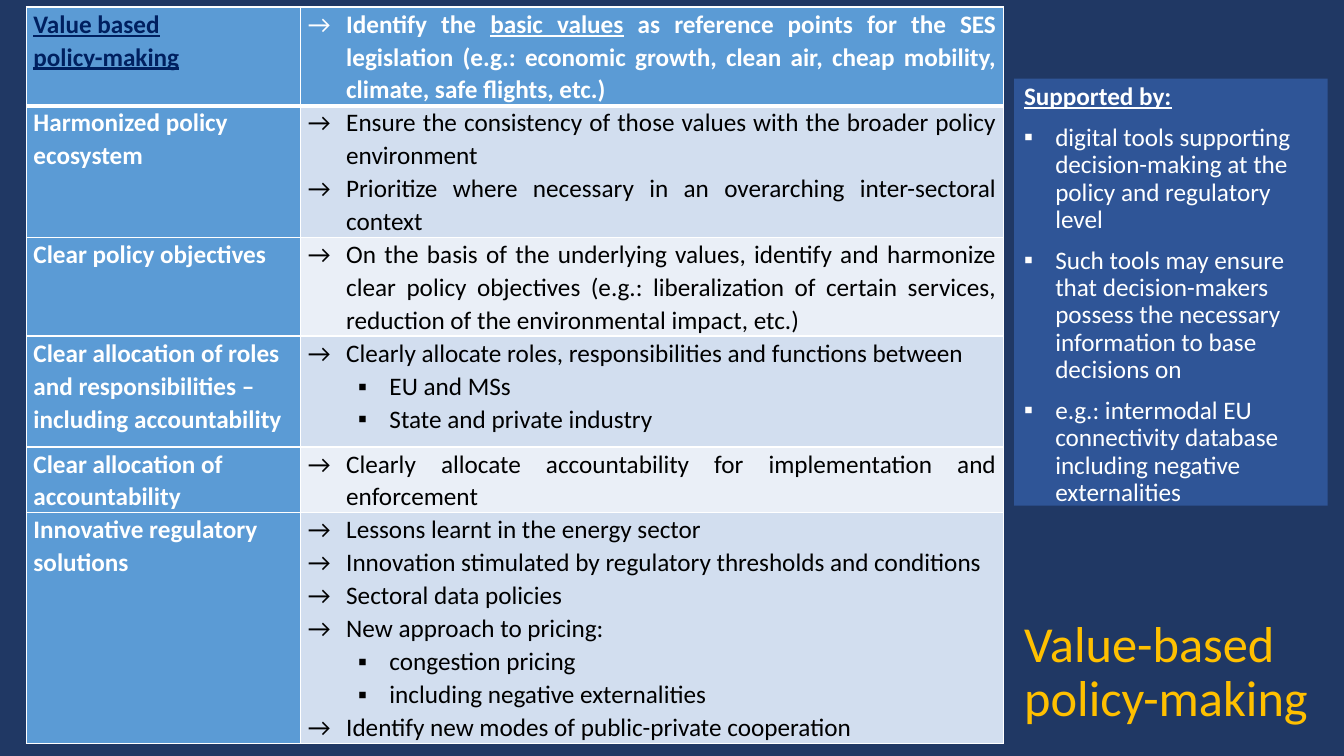
from dataclasses import dataclass
from lxml import etree
from pptx import Presentation
from pptx.dml.color import RGBColor
from pptx.enum.shapes import MSO_SHAPE
from pptx.enum.text import MSO_ANCHOR, MSO_AUTO_SIZE, PP_ALIGN
from pptx.oxml.ns import qn
from pptx.util import Pt

RECT = MSO_SHAPE.RECTANGLE
TOP, BOTTOM = MSO_ANCHOR.TOP, MSO_ANCHOR.BOTTOM
NO_FIT, GROW = MSO_AUTO_SIZE.NONE, MSO_AUTO_SIZE.SHAPE_TO_FIT_TEXT
LEFT, JUSTIFY = PP_ALIGN.LEFT, PP_ALIGN.JUSTIFY


@dataclass(frozen=True)
class Theme:
    font: str = "Calibri"
    title_size: float = 36
    body_size: float = 18
    background: str = "203864"
    title: str = "FFC000"
    panel: str = "2F5597"
    head: str = "5B9BD5"
    bands: tuple = ("EAEFF7", "D2DEEF")
    light: str = "FFFFFF"
    dark: str = "000000"
    accent: str = "002060"
    row_line: float = 23.5


ARROW = ("→", 27.4, -27.4)
SQUARE = ("▪", 22.3, -22.3)
SUB_SQUARE = ("▪", 58.3, -22.3)

ROWS = [
    (3, ["|Value based|", "|policy-making|"],
     ["Identify the |basic values| as reference points for the SES legislation "
      "(e.g.: economic growth, clean air, cheap mobility, climate, safe flights, etc.)"]),
    (4, ["Harmonized policy ecosystem"],
     ["Ensure the consistency of those values with the broader policy environment",
      "Prioritize where necessary in an overarching inter-sectoral context"]),
    (3, ["Clear policy objectives"],
     ["On the basis of the underlying values, identify and harmonize clear policy "
      "objectives (e.g.: liberalization of certain services, reduction of the "
      "environmental impact, etc.)"]),
    (3.37, ["Clear allocation of roles and responsibilities – including accountability"],
     ["Clearly allocate roles, responsibilities and functions between",
      ("EU and MSs", "State and private industry")]),
    (2, ["Clear allocation of accountability"],
     ["Clearly allocate accountability for implementation and enforcement"]),
    (7, ["Innovative regulatory solutions"],
     ["Lessons learnt in the energy sector",
      "Innovation stimulated by regulatory thresholds and conditions",
      "Sectoral data policies",
      "New approach to pricing:",
      ("congestion pricing", "including negative externalities"),
      "Identify new modes of public-private cooperation"]),
]

SUPPORT = [
    "digital tools supporting decision-making at the policy and regulatory level",
    "Such tools may ensure that decision-makers possess the necessary information "
    "to base decisions on",
    "e.g.: intermodal EU connectivity database including negative externalities",
]


def rgb(value):
    return RGBColor.from_string(value)


def outline(items):
    for item in items:
        if isinstance(item, tuple):
            yield from ((text, SUB_SQUARE) for text in item)
        else:
            yield item, ARROW


class SlideBuilder:
    def __init__(self, prs, theme):
        self.theme = theme
        self.s = prs.slides.add_slide(prs.slide_layouts[5])
        fill = self.s.background.fill
        fill.solid()
        fill.fore_color.rgb = rgb(theme.background)

    def paragraph(self, tf, index, text, color, size, bold=False, bullet=None,
                  align=LEFT, spacing=0.9, before=0):
        p = tf.paragraphs[0] if index == 0 else tf.add_paragraph()
        p.alignment, p.line_spacing, p.space_before = align, spacing, Pt(before)
        for i, part in enumerate(text.split("|")):
            if part:
                r = p.add_run()
                r.text = part
                font = r.font
                font.name, font.size, font.bold = self.theme.font, Pt(size), bold
                font.underline = i % 2 == 1
                font.color.rgb = rgb(color)
        if bullet:
            char, margin, indent = bullet
            pPr = p._p.get_or_add_pPr()
            pPr.set("marL", str(Pt(margin)))
            pPr.set("indent", str(Pt(indent)))
            etree.SubElement(pPr, qn("a:buFont")).set("typeface", self.theme.font)
            etree.SubElement(pPr, qn("a:buChar")).set("char", char)

    def title(self, text, x, y, w, h):
        sp = self.s.shapes.title
        sp.left, sp.top, sp.width, sp.height = Pt(x), Pt(y), Pt(w), Pt(h)
        tf = sp.text_frame
        tf.word_wrap, tf.auto_size, tf.vertical_anchor = True, NO_FIT, BOTTOM
        self.paragraph(tf, 0, text, self.theme.title, self.theme.title_size)

    def panel(self, heading, items, x, y, w, h):
        sp = self.s.shapes.add_shape(RECT, Pt(x), Pt(y), Pt(w), Pt(h))
        sp.shadow.inherit = False
        sp.fill.solid()
        sp.fill.fore_color.rgb = rgb(self.theme.panel)
        sp.line.fill.background()
        tf = sp.text_frame
        tf.word_wrap, tf.auto_size, tf.vertical_anchor = True, GROW, TOP
        color, size = self.theme.light, self.theme.body_size
        self.paragraph(tf, 0, f"|{heading}|", color, size, bold=True, before=10)
        for i, text in enumerate(items, 1):
            self.paragraph(tf, i, text, color, size, bullet=SQUARE, before=10)

    def cell(self, cell, fill, widths):
        cell.margin_left = cell.margin_right = Pt(5)
        cell.margin_top = cell.margin_bottom = 0
        cell.vertical_anchor = TOP
        cell.fill.solid()
        cell.fill.fore_color.rgb = rgb(fill)
        tcPr = cell._tc.get_or_add_tcPr()
        for i, (side, width) in enumerate(zip("LRTB", widths)):
            ln = etree.Element(qn(f"a:ln{side}"), w=str(Pt(width)))
            solid = etree.SubElement(ln, qn("a:solidFill"))
            etree.SubElement(solid, qn("a:srgbClr")).set("val", self.theme.light)
            tcPr.insert(i, ln)

    def table(self, rows, x, y, columns):
        t = self.theme
        heights = [lines * t.row_line for lines, _, _ in rows]
        frame = self.s.shapes.add_table(len(rows), len(columns), Pt(x), Pt(y),
                                        Pt(sum(columns)), Pt(sum(heights)))
        table = frame.table
        table.first_row = table.horz_banding = False
        for column, width in zip(table.columns, columns):
            column.width = Pt(width)
        for i, (_, labels, items) in enumerate(rows):
            header = i == 0
            table.rows[i].height = Pt(heights[i])
            widths = (1, 1, 3 if i == 1 else 1, 3 if header else 1)
            label, detail = table.cell(i, 0), table.cell(i, 1)
            self.cell(label, t.head, widths)
            self.cell(detail, t.head if header else t.bands[i % 2], widths)
            for j, text in enumerate(labels):
                self.paragraph(label.text_frame, j, text, t.accent if header else t.light,
                               t.body_size, bold=True, spacing=1.07)
            for j, (text, bullet) in enumerate(outline(items)):
                self.paragraph(detail.text_frame, j, text, t.light if header else t.dark,
                               t.body_size, bold=header, bullet=bullet,
                               align=JUSTIFY, spacing=1.07)


def main():
    prs = Presentation()
    prs.slide_width, prs.slide_height = Pt(960), Pt(540)
    builder = SlideBuilder(prs, Theme(bands=("D2DEEF", "D2DEEF")[:0] or ("EAEFF7", "D2DEEF")))
    builder.title("Value-based policy-making", 724.4, 427.7, 224, 95.8)
    builder.table(ROWS, 18.9, 5, (196, 501.8))
    builder.panel("Supported by:", SUPPORT, 724.4, 56.2, 224, 305)
    prs.save("out.pptx")


if __name__ == "__main__":
    main()
